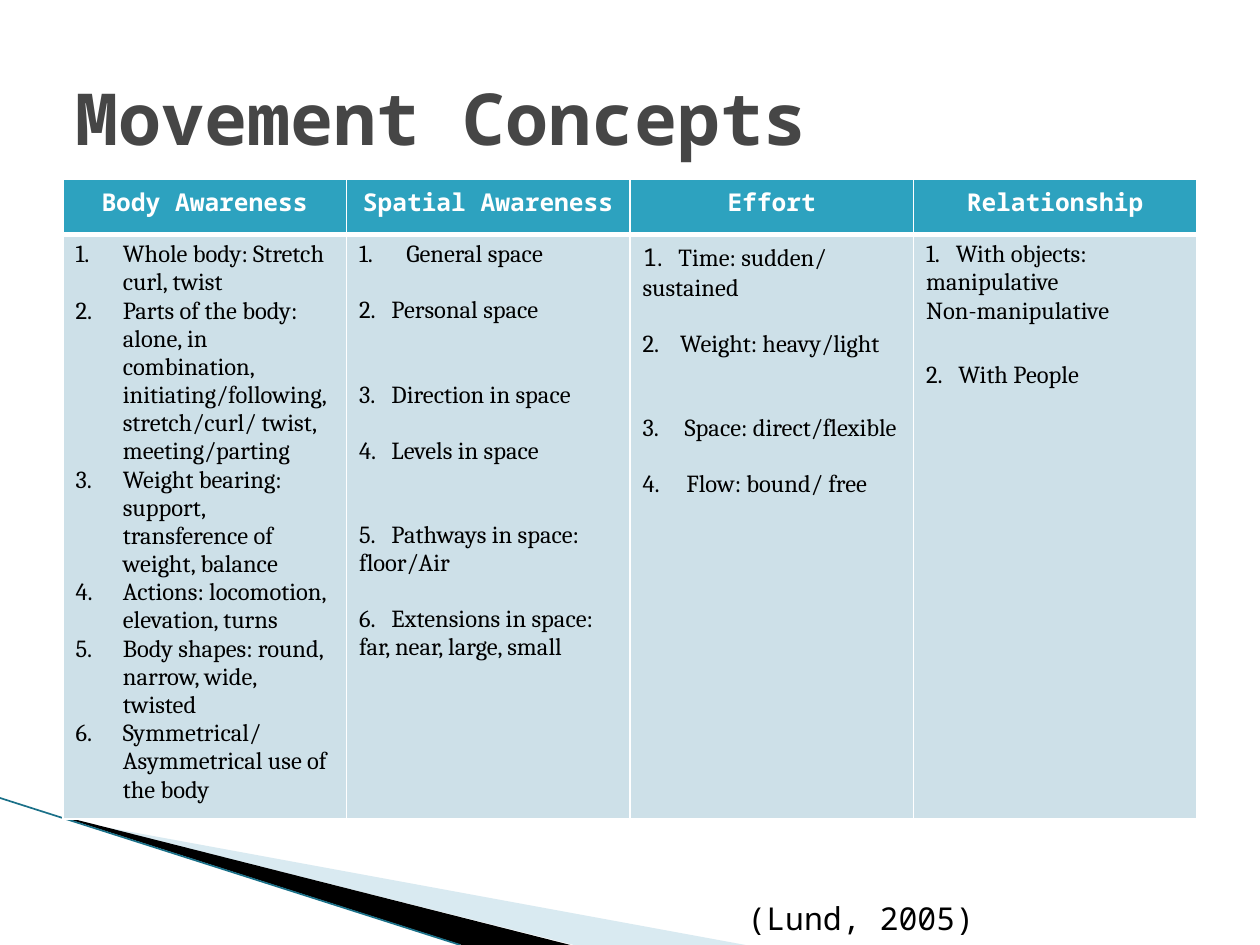
from lxml import etree
from pptx import Presentation
from pptx import util as u
from pptx.dml.color import RGBColor
from pptx.enum import shapes, text
from pptx.oxml.ns import qn

Pt = u.Pt
MONO, SERIF = "Noto Sans Mono", "Cambria"
WHITE, BLACK, TEAL, PALE = "FFFFFF", "000000", "2DA2BF", "CDE0E8"

TITLE = "Movement Concepts"
CITATION = "(Lund, 2005)"
HEADERS = ["Body Awareness", "Spatial Awareness", "Effort", "Relationship"]
BODY_AWARENESS = [
    "Whole body: Stretch curl, twist",
    "Parts of the body: alone, in combination, initiating/following, "
    "stretch/curl/ twist, meeting/parting",
    "Weight bearing: support, transference of weight, balance",
    "Actions: locomotion, elevation, turns",
    "Body shapes: round, narrow, wide, twisted",
    "Symmetrical/ Asymmetrical use of the body",
]
# Other columns: number, wording, tab position, space before
OTHER_COLUMNS = [
    [("1", "General space", 27, 0),
     ("2", "Personal space", 18.5, 16),
     ("3", "Direction in space", 18.5, 32),
     ("4", "Levels in space", 18.5, 16),
     ("5", "Pathways in space: floor/Air", 18.5, 32),
     ("6", "Extensions in space: far, near, large, small", 18.5, 16)],
    [("1", "Time: sudden/ sustained", 20.5, 0),
     ("2", "Weight: heavy/light", 21.5, 16),
     ("3", "Space: direct/flexible", 24, 32),
     ("4", "Flow: bound/ free", 25, 16)],
    [("1", "With objects: manipulative", 17, 0),
     ("", "Non-manipulative", 0, 0),
     ("2", "With People", 18.5, 21)],
]
# Corner wedges: points, colour, opacity in percent
WEDGES = [
    ([(39.6, 468.7), (425.5, 540), (328, 540), (39.6, 468)], "A0CBDC", 40),
    ([(38.2, 467.3), (326, 540), (264, 540), (38.9, 468)], BLACK, 100),
]


def rgb(value):
    return RGBColor.from_string(value)


def add_run(paragraph, wording, size, font, color, bold=False):
    run = paragraph.add_run()
    run.text = wording
    run.font.size, run.font.name, run.font.bold = Pt(size), font, bold
    run.font.color.rgb = rgb(color)


def add_box(slide, area, wording, size, color, bold=False):
    box = slide.shapes.add_textbox(*map(Pt, area))
    box.text_frame.word_wrap = True
    add_run(box.text_frame.paragraphs[0], wording, size, MONO, color, bold)
    return box.text_frame


def set_number(paragraph):
    properties = paragraph._p.get_or_add_pPr()
    properties.set("marL", str(Pt(27)))
    properties.set("indent", str(-Pt(27)))
    etree.SubElement(properties, qn("a:buFont"), typeface="+mj-lt")
    etree.SubElement(properties, qn("a:buAutoNum"), type="arabicPeriod")


def set_tab(paragraph, position):
    tabs = etree.SubElement(paragraph._p.get_or_add_pPr(), qn("a:tabLst"))
    etree.SubElement(tabs, qn("a:tab"), pos=str(Pt(position)), algn="l")


def style_cell(cell, fill, top, bottom):
    properties = cell._tc.get_or_add_tcPr()
    for side, width in (("L", 1), ("R", 1), ("T", top), ("B", bottom)):
        line = etree.SubElement(properties, qn("a:ln" + side), w=str(Pt(width)))
        solid = etree.SubElement(line, qn("a:solidFill"))
        etree.SubElement(solid, qn("a:srgbClr"), val=WHITE)
    cell.fill.solid()
    cell.fill.fore_color.rgb = rgb(fill)


def cell_paragraphs(cell, items):
    frame = cell.text_frame
    for index, item in enumerate(items):
        yield (frame.add_paragraph() if index else frame.paragraphs[0]), item


def add_corner(slide):
    for points, color, opacity in WEDGES:
        builder = slide.shapes.build_freeform(*points[0], scale=Pt(1))
        builder.add_line_segments(points[1:], close=True)
        wedge = builder.convert_to_shape()
        wedge.shadow.inherit = False
        wedge.line.fill.background()
        wedge.fill.solid()
        wedge.fill.fore_color.rgb = rgb(color)
        if opacity < 100:
            tint = wedge._element.spPr.find(".//" + qn("a:srgbClr"))
            etree.SubElement(tint, qn("a:alpha"), val=str(opacity * 1000))
    edge = slide.shapes.add_connector(
        shapes.MSO_CONNECTOR.STRAIGHT, Pt(0), Pt(456), Pt(263), Pt(540))
    edge.line.color.rgb = rgb("1A7088")
    edge.line.width = Pt(0.95)
    etree.SubElement(edge._element.spPr, qn("a:effectLst"))


def add_concepts(slide):
    table = slide.shapes.add_table(
        2, len(HEADERS), Pt(36), Pt(102.2), Pt(648), Pt(365.8)).table
    table.rows[0].height, table.rows[1].height = Pt(31.7), Pt(334.1)

    for column, header in enumerate(HEADERS):
        table.columns[column].width = Pt(162)
        cell = table.cell(0, column)
        style_cell(cell, TEAL, 1, 3)
        style_cell(table.cell(1, column), PALE, 3, 1)
        paragraph = cell.text_frame.paragraphs[0]
        paragraph.alignment = text.PP_ALIGN.CENTER
        add_run(paragraph, header, 14, MONO, WHITE, True)

    # Automatically numbered first column
    for paragraph, wording in cell_paragraphs(table.cell(1, 0), BODY_AWARENESS):
        set_number(paragraph)
        add_run(paragraph, wording, 14, SERIF, BLACK)

    # Columns with typed numbers, wrapping back to the margin
    for column, items in enumerate(OTHER_COLUMNS, start=1):
        for paragraph, item in cell_paragraphs(table.cell(1, column), items):
            number, wording, tab, before = item
            if number:
                set_tab(paragraph, tab)
                mono_number = HEADERS[column] == "Effort" and number == "1"
                add_run(paragraph, number, 14, MONO if mono_number else SERIF, BLACK)
                wording = ".\t" + wording
            if before:
                paragraph.space_before = Pt(before)
            add_run(paragraph, wording, 14, SERIF, BLACK)


def main():
    presentation = Presentation()
    presentation.slide_width, presentation.slide_height = Pt(720), Pt(540)
    slide = presentation.slides.add_slide(presentation.slide_layouts[6])
    add_corner(slide)
    add_concepts(slide)
    title = add_box(slide, (36, 21.6, 648, 90), TITLE, 41, "464646", True)
    title.vertical_anchor = text.MSO_ANCHOR.MIDDLE
    citation = add_box(slide, (420, 510, 282, 30), CITATION, 18, BLACK)
    citation.auto_size = text.MSO_AUTO_SIZE.SHAPE_TO_FIT_TEXT
    presentation.save("out.pptx")


if __name__ == "__main__":
    main()
